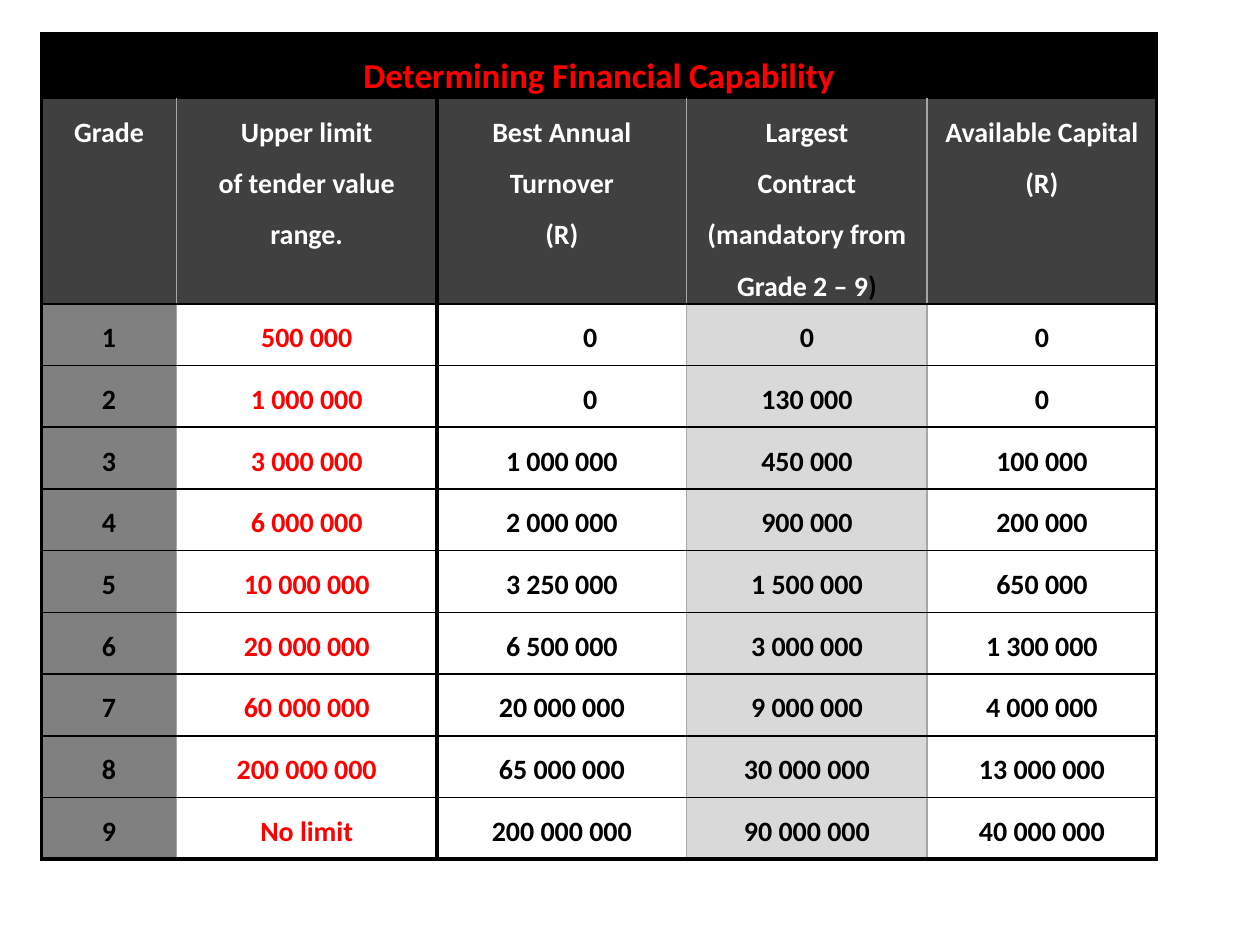
from pptx import Presentation as Deck
from pptx.dml.color import RGBColor as RGB
from pptx.enum.text import PP_ALIGN as Align, MSO_ANCHOR as Anchor
from pptx.oxml.ns import qn
from pptx.util import Inches, Pt
from lxml.etree import SubElement as Sub

BLACK = RGB(0x00, 0x00, 0x00)
WHITE = RGB(0xFF, 0xFF, 0xFF)
RED = RGB(0xFF, 0x00, 0x00)
DARK = RGB(0x40, 0x40, 0x40)
MID = RGB(0x80, 0x80, 0x80)
PALE = RGB(0xD9, 0xD9, 0xD9)
RULE = RGB(0xA6, 0xA6, 0xA6)

# Slide grid: 100 columns by 75 rows
WIDE, HIGH = 100, 75
UNIT = Inches(0.1)
BOX = (3.3, 2.7, 88.4, 64.2)
COLS = (10.7, 20.7, 19.8, 19.1, 18.2)
ROW, HEAD_ROW = 4.9, 7.2
SIDE, SHIFT = 0.7, 4.5

TITLE = "Determining Financial Capability"
HEADS = (
    ("Grade",),
    ("Upper limit", "of tender value range."),
    ("Best Annual Turnover", "(R)"),
    ("Largest", "Contract", "(mandatory from Grade 2 – 9"),
    ("Available Capital", "(R)"),
)
GRADES = (
    ("1", "500 000", "0", "0", "0"),
    ("2", "1 000 000", "0", "130 000", "0"),
    ("3", "3 000 000", "1 000 000", "450 000", "100 000"),
    ("4", "6 000 000", "2 000 000", "900 000", "200 000"),
    ("5", "10 000 000", "3 250 000", "1 500 000", "650 000"),
    ("6", "20 000 000", "6 500 000", "3 000 000", "1 300 000"),
    ("7", "60 000 000", "20 000 000", "9 000 000", "4 000 000"),
    ("8", "200 000 000", "65 000 000", "30 000 000", "13 000 000"),
    ("9", "No limit", "200 000 000", "90 000 000", "40 000 000"),
)
FILLS = (MID, WHITE, WHITE, PALE, WHITE)
INKS = (BLACK, RED, BLACK, BLACK, BLACK)

# Rules between columns, from the left edge to the right edge
THIN, HEAVY = (BLACK, 1), (BLACK, 2.25)
SOFT = (RULE, 1)
EDGES = (HEAVY, SOFT, HEAVY, SOFT, SOFT, HEAVY)


def grid(n):
    return round(n * UNIT)


def add_run(para, text, ink, size):
    run = para.add_run()
    run.text = text
    style = {"name": "Calibri", "size": Pt(size), "bold": True}
    for key, val in style.items():
        setattr(run.font, key, val)
    run.font.color.rgb = ink


def rule_cell(cell, left, top, right, base):
    props = cell._tc.get_or_add_tcPr()
    sides = {"L": left, "R": right, "T": top, "B": base}
    for side, (ink, width) in sides.items():
        line = Sub(props, qn(f"a:ln{side}"), w=str(Pt(width)))
        Sub(Sub(line, qn("a:solidFill")), qn("a:srgbClr"), val=str(ink))


def fill_cell(cell, lines, fill, ink, size=16):
    form = {"margin_left": grid(SIDE), "margin_right": grid(SIDE),
            "margin_top": 0, "margin_bottom": 0,
            "vertical_anchor": Anchor.TOP}
    for key, val in form.items():
        setattr(cell, key, val)
    cell.fill.solid()
    cell.fill.fore_color.rgb = fill
    frame = cell.text_frame
    for i, text in enumerate(lines):
        para = frame.add_paragraph() if i else frame.paragraphs[0]
        para.alignment = Align.CENTER
        para.line_spacing = 1.5
        add_run(para, text, ink, size)


def add_grades(slide, box):
    x, y, w, h = map(grid, box)
    count = len(GRADES) + 2
    frame = slide.shapes.add_table(count, len(COLS), x, y, w, h)
    table = frame.table
    table.first_row = table.horz_banding = False
    for col, width in zip(table.columns, COLS):
        col.width = grid(width)
    for r, row in enumerate(table.rows):
        row.height = grid(HEAD_ROW if r == 1 else ROW)
    frame.height = h

    # Title band
    title = table.cell(0, 0)
    title.merge(table.cell(0, len(COLS) - 1))
    rule_cell(title, HEAVY, HEAVY, HEAVY, THIN)
    fill_cell(title, (TITLE,), BLACK, RED, 20)

    # Column heads and grade rows
    for r in range(1, count):
        base = HEAVY if r == count - 1 else THIN
        for c in range(len(COLS)):
            cell = table.cell(r, c)
            rule_cell(cell, EDGES[c], THIN, EDGES[c + 1], base)
            if r == 1:
                fill_cell(cell, HEADS[c], DARK, WHITE)
            else:
                fill_cell(cell, (GRADES[r - 2][c],), FILLS[c], INKS[c])

    # Dark closing bracket of the contract head
    add_run(table.cell(1, 3).text_frame.paragraphs[-1], ")", BLACK, 16)

    # Zero turnovers sit right of centre
    for r, grade in enumerate(GRADES, 2):
        if grade[2] == "0":
            para = table.cell(r, 2).text_frame.paragraphs[0]
            para._p.get_or_add_pPr().set("marL", str(grid(SHIFT)))


def main():
    deck = Deck()
    deck.slide_width, deck.slide_height = grid(WIDE), grid(HIGH)
    slide = deck.slides.add_slide(deck.slide_layouts[6])
    add_grades(slide, BOX)
    deck.save("out.pptx")


if __name__ == "__main__":
    main()
